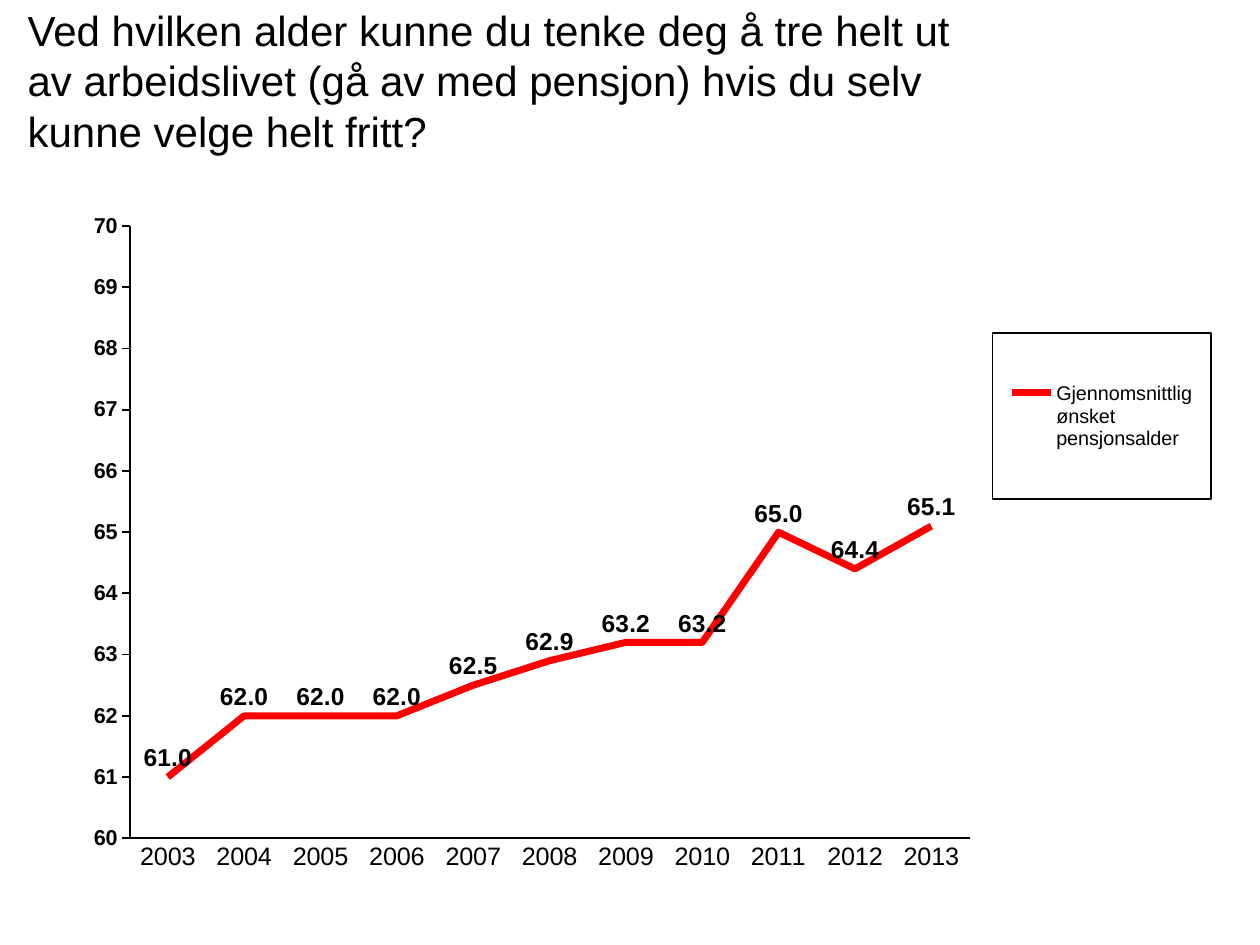
from lxml import etree
from pptx import Presentation
from pptx.chart.data import CategoryChartData
from pptx.dml.color import RGBColor
from pptx.enum.chart import XL_CHART_TYPE, XL_LABEL_POSITION, XL_LEGEND_POSITION, XL_MARKER_STYLE, XL_TICK_MARK
from pptx.enum.text import MSO_ANCHOR, MSO_AUTO_SIZE, PP_ALIGN
from pptx.oxml import parse_xml
from pptx.oxml.ns import nsdecls, qn
from pptx.util import Pt

LINE = XL_CHART_TYPE.LINE
ABOVE = XL_LABEL_POSITION.ABOVE
RIGHT = XL_LEGEND_POSITION.RIGHT
NO_MARKER = XL_MARKER_STYLE.NONE
NO_TICK, TICK_OUT = XL_TICK_MARK.NONE, XL_TICK_MARK.OUTSIDE
MIDDLE = MSO_ANCHOR.MIDDLE
NO_FIT = MSO_AUTO_SIZE.NONE
LEFT = PP_ALIGN.LEFT

FONT = "Arial"
COLORS = {"text": "000000", "line": "FF0000"}
TITLE = ("Ved hvilken alder kunne du tenke deg å tre helt ut av arbeidslivet "
         "(gå av med pensjon) hvis du selv kunne velge helt fritt?")
SERIES = "Gjennomsnittlig ønsket pensjonsalder"
YEARS = [str(year) for year in range(2003, 2014)]
AGES = [61, 62, 62, 62, 62.5, 62.9, 63.2, 63.2, 65, 64.4, 65.1]


def rgb(name):
    return RGBColor.from_string(COLORS[name])


def set_font(font, size, bold=False):
    font.name = FONT
    font.size = Pt(size)
    font.bold = bold
    font.color.rgb = rgb("text")


def set_line(line, color, width):
    line.color.rgb = rgb(color)
    line.width = Pt(width)


def manual_layout(x, y, w, h, inner=False):
    layout = etree.Element(qn("c:layout"))
    manual = etree.SubElement(layout, qn("c:manualLayout"))
    values = [("layoutTarget", "inner")] if inner else []
    values += [("xMode", "edge"), ("yMode", "edge"), ("x", x), ("y", y), ("w", w), ("h", h)]
    for tag, value in values:
        etree.SubElement(manual, qn(f"c:{tag}")).set("val", str(value))
    return layout


def replace_layout(parent, index, layout):
    for old in parent.findall(qn("c:layout")):
        parent.remove(old)
    parent.insert(index, layout)


def add_title(s, x, y, w, h):
    sp = s.shapes.title
    sp.left, sp.top, sp.width, sp.height = Pt(x), Pt(y), Pt(w), Pt(h)
    tf = sp.text_frame
    tf.text = TITLE
    tf.word_wrap = True
    tf.auto_size = NO_FIT
    tf.vertical_anchor = MIDDLE
    p = tf.paragraphs[0]
    p.alignment = LEFT
    set_font(p.runs[0].font, 24)


def format_axes(chart):
    years, ages = chart.category_axis, chart.value_axis
    for axis, tick, size, bold in ((years, NO_TICK, 14.4, False), (ages, TICK_OUT, 12.3, True)):
        axis.has_major_gridlines = False
        axis.major_tick_mark = tick
        axis.minor_tick_mark = NO_TICK
        set_font(axis.tick_labels.font, size, bold)
        set_line(axis.format.line, "text", 1.03)
    ages.minimum_scale, ages.maximum_scale, ages.major_unit = 60, 70, 1
    ages.tick_labels.number_format = "General"
    ages.tick_labels.number_format_is_linked = False


def format_series(plot):
    plot.vary_by_categories = False
    series = plot.series[0]
    series.smooth = False
    series.marker.style = NO_MARKER
    set_line(series.format.line, "line", 4)
    labels = series.data_labels
    labels.show_value = True
    labels.position = ABOVE
    labels.number_format = "0.0"
    labels.number_format_is_linked = False
    set_font(labels.font, 14, True)


def format_legend(chart):
    chart.has_legend = True
    legend = chart.legend
    legend.position = RIGHT
    legend.include_in_layout = False
    set_font(legend.font, 11.3)
    element = legend.font._element if hasattr(legend.font, "_element") else legend._element
    element = legend._element
    replace_layout(element, 1, manual_layout(0.81, 0.18, 0.19, 0.25))
    border = parse_xml(
        f'<c:spPr {nsdecls("c", "a")}><a:noFill/><a:ln w="{Pt(1)}"><a:solidFill>'
        f'<a:srgbClr val="{COLORS["text"]}"/></a:solidFill></a:ln></c:spPr>')
    element.find(qn("c:txPr")).addprevious(border)


def add_age_chart(s, x, y, w, h):
    data = CategoryChartData()
    data.categories = YEARS
    data.add_series(SERIES, AGES)
    chart = s.shapes.add_chart(LINE, Pt(x), Pt(y), Pt(w), Pt(h), data).chart
    chart.has_title = False
    set_font(chart.font, 12.3)
    format_axes(chart)
    format_series(chart.plots[0])
    format_legend(chart)
    plot_area = chart._chartSpace.chart.plotArea
    replace_layout(plot_area, 0, manual_layout(0.06, 0.02, 0.73, 0.92, inner=True))


def main():
    prs = Presentation()
    prs.slide_width, prs.slide_height = Pt(720), Pt(540)
    s = prs.slides.add_slide(prs.slide_layouts[5])
    add_title(s, 8.6, 9.4, 566.6, 72.7)
    add_age_chart(s, 34.6, 121.7, 658, 380.2)
    prs.save("out.pptx")


if __name__ == "__main__":
    main()
